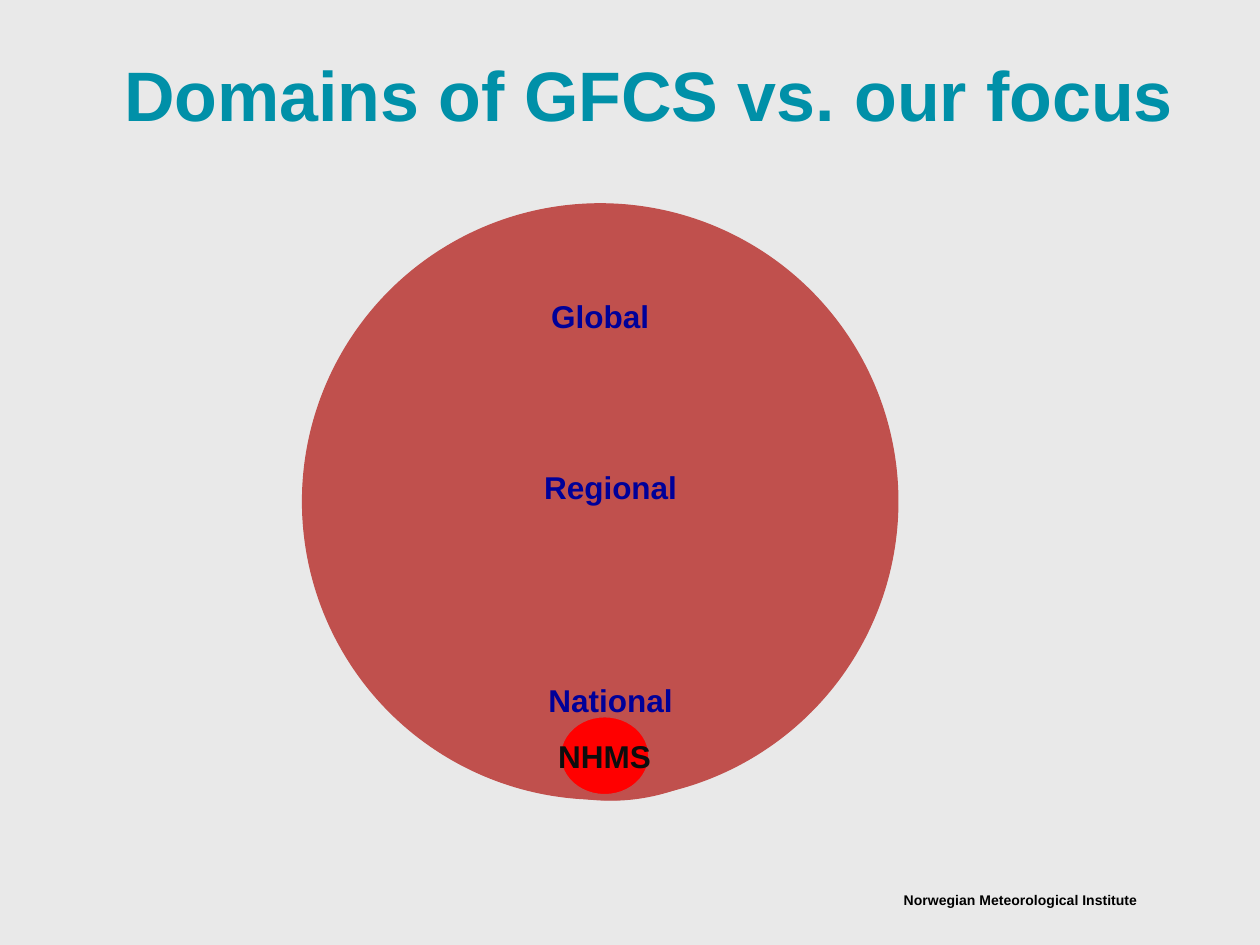
from pptx import Presentation
from pptx.dml.color import RGBColor
from pptx.enum.shapes import MSO_SHAPE
from pptx.enum.text import MSO_ANCHOR, PP_ALIGN
from pptx.util import Cm, Pt

TITLE = "Domains of GFCS vs. our focus"
TITLE_BOX = (1.37, 0.91, 23.42, 1.96)
FOOTER = "Norwegian Meteorological Institute"
FOOTER_BOX = (16.71, 17.98, 6.22, 0.33)
DOMAINS = [
    ("Global", (6.1, 4.11, 12, 12), "domain", "label", MSO_ANCHOR.TOP),
    ("Regional", (8.31, 8.13, 8, 8), "domain", "label", MSO_ANCHOR.TOP),
    ("National", (10.31, 12.12, 4, 4), "domain", "label", MSO_ANCHOR.MIDDLE),
    ("NHMS", (11.3, 14.45, 1.78, 1.57), "focus", "focus_label", MSO_ANCHOR.MIDDLE),
]
THEME = {
    "font": "Arial",
    "colors": {
        "background": "E9E9E9",
        "domain": "C0504D",
        "focus": "FF0000",
        "title": "0090A8",
        "label": "000099",
        "focus_label": "0D0D0D",
        "footer": "000000",
    },
    "sizes": {"title": 40, "label": 18, "focus_label": 18, "footer": 8},
}


def color(name):
    return RGBColor.from_string(THEME["colors"][name])


def place(sp, box):
    sp.left, sp.top, sp.width, sp.height = map(Cm, box)


def write(sp, text, style, align=PP_ALIGN.CENTER, anchor=MSO_ANCHOR.MIDDLE, wrap=False):
    tf = sp.text_frame
    tf.word_wrap = wrap
    tf.vertical_anchor = anchor
    p = tf.paragraphs[0]
    p.text = text
    p.alignment = align
    p.font.name = THEME["font"]
    p.font.size = Pt(THEME["sizes"][style])
    p.font.bold = True
    p.font.color.rgb = color(style)
    return tf


def add_domain(s, text, box, fill, style, anchor):
    sp = s.shapes.add_shape(MSO_SHAPE.OVAL, *map(Cm, box))
    sp.shadow.inherit = False
    sp.fill.solid()
    sp.fill.fore_color.rgb = color(fill)
    sp.line.color.rgb = color("domain")
    sp.line.width = Pt(0.75)
    write(sp, text, style, anchor=anchor)


def main():
    prs = Presentation()
    prs.slide_width, prs.slide_height = Cm(25.4), Cm(19.05)
    s = prs.slides.add_slide(prs.slide_layouts[5])
    s.background.fill.solid()
    s.background.fill.fore_color.rgb = color("background")

    place(s.shapes.title, TITLE_BOX)
    write(s.shapes.title, TITLE, "title", wrap=True)

    footer = s.shapes.add_textbox(*map(Cm, FOOTER_BOX))
    tf = write(footer, FOOTER, "footer", PP_ALIGN.RIGHT, MSO_ANCHOR.TOP, True)
    tf.margin_left = tf.margin_top = tf.margin_right = tf.margin_bottom = 0

    for domain in DOMAINS:
        add_domain(s, *domain)

    prs.save("out.pptx")


if __name__ == "__main__":
    main()
